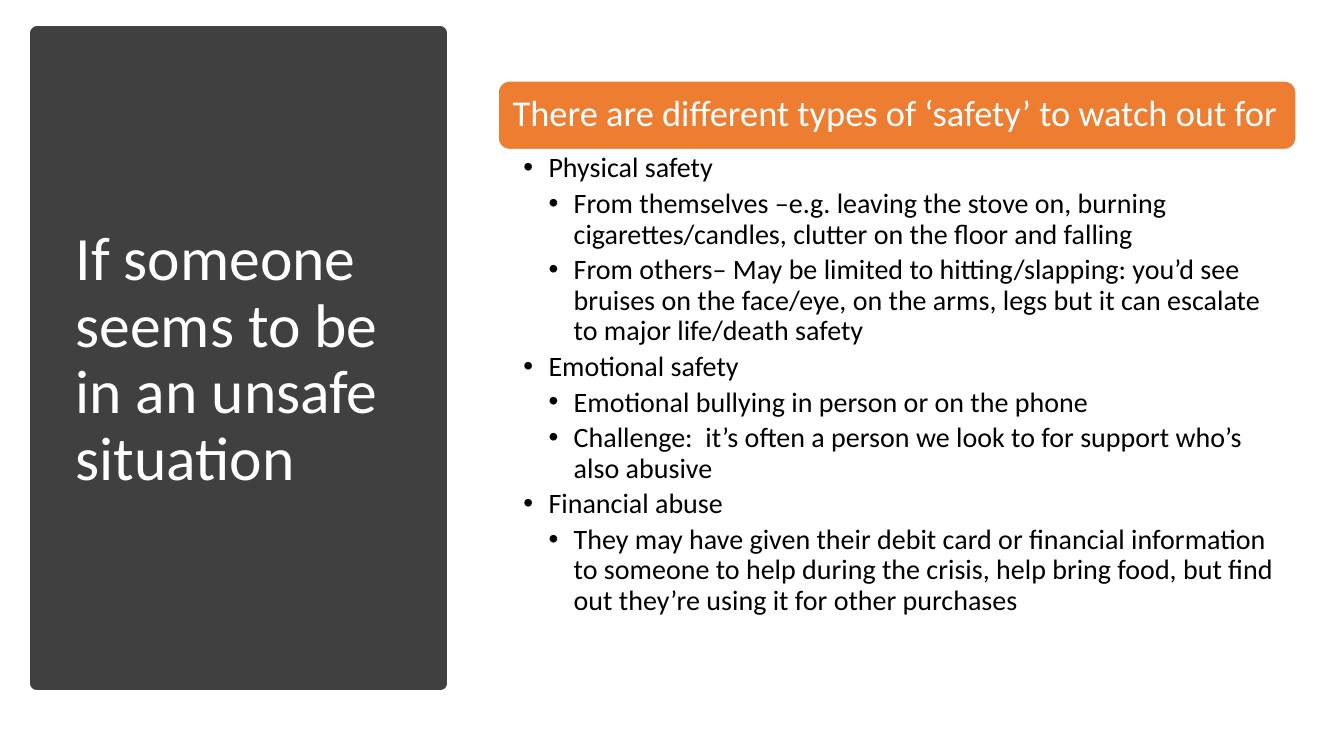
from dataclasses import dataclass

from lxml import etree
from pptx import Presentation
from pptx.dml.color import RGBColor
from pptx.enum.shapes import MSO_SHAPE as Shape
from pptx.enum.text import MSO_ANCHOR as Anchor, MSO_AUTO_SIZE as AutoSize, PP_ALIGN as Align
from pptx.oxml.ns import qn
from pptx.util import Pt


@dataclass(frozen=True)
class Theme:
    font: str = "Calibri"
    panel: str = "404040"
    accent: str = "ED7D31"
    light: str = "FFFFFF"
    dark: str = "000000"
    title_size: int = 44
    header_size: int = 26
    body_size: int = 20
    line_spacing: float = 0.9
    indent: int = 18


class SlideBuilder:
    def __init__(self, prs, theme):
        self.theme = theme
        self.s = prs.slides.add_slide(prs.slide_layouts[1])

    def place(self, sp, box):
        sp.left, sp.top, sp.width, sp.height = (Pt(v) for v in box)

    def frame(self, sp, insets, anchor):
        tf = sp.text_frame
        tf.word_wrap = True
        tf.auto_size = AutoSize.NONE
        tf.vertical_anchor = anchor
        tf.margin_left, tf.margin_top, tf.margin_right, tf.margin_bottom = (
            Pt(v) for v in insets)
        return tf

    def style(self, p, size, color, after=0):
        p.alignment = Align.LEFT
        p.line_spacing = self.theme.line_spacing
        p.space_before, p.space_after = Pt(0), Pt(after)
        for r in p.runs:
            r.font.name = self.theme.font
            r.font.size = Pt(size)
            r.font.color.rgb = RGBColor.from_string(color)

    def bullet(self, p):
        indent = self.theme.indent
        pPr = p._p.get_or_add_pPr()
        pPr.set("marL", str(Pt(indent * (p.level + 1))))
        pPr.set("indent", str(Pt(-indent)))
        etree.SubElement(pPr, qn("a:buFont")).set("typeface", "Arial")
        etree.SubElement(pPr, qn("a:buChar")).set("char", "•")

    def shape(self, kind, box, fill, line, weight):
        sp = self.s.shapes.add_shape(kind, *(Pt(v) for v in box))
        sp.shadow.inherit = False
        sp.fill.solid()
        sp.fill.fore_color.rgb = RGBColor.from_string(fill)
        sp.line.color.rgb = RGBColor.from_string(line)
        sp.line.width = Pt(weight)
        return sp

    def panel(self, box):
        t = self.theme
        sp = self.shape(Shape.RECTANGLE, box, t.panel, t.panel, 10)
        # Send the panel behind the placeholders
        self.s.shapes._spTree.insert(2, sp._element)

    def title(self, text, box):
        sp = self.s.shapes.title
        self.place(sp, box)
        tf = self.frame(sp, (7.2, 3.6, 7.2, 3.6), Anchor.MIDDLE)
        tf.text = text
        self.style(tf.paragraphs[0], self.theme.title_size, self.theme.light)

    def header(self, text, box):
        t = self.theme
        sp = self.shape(Shape.ROUNDED_RECTANGLE, box, t.accent, t.light, 1)
        tf = self.frame(sp, (8, 8, 8, 8), Anchor.MIDDLE)
        tf.text = text
        self.style(tf.paragraphs[0], t.header_size, t.light)

    def bullets(self, items, box):
        sp = self.s.placeholders[1]
        self.place(sp, box)
        tf = self.frame(sp, (18, 3, 14.4, 3), Anchor.TOP)
        for i, (level, text) in enumerate(items):
            p = tf.add_paragraph() if i else tf.paragraphs[0]
            p.text = text
            p.level = level
            self.style(p, self.theme.body_size, self.theme.dark, after=4)
            self.bullet(p)


SAFETY_TYPES = [
    (0, "Physical safety"),
    (1, "From themselves –e.g. leaving the stove on, burning cigarettes/candles, "
        "clutter on the floor and falling"),
    (1, "From others– May be limited to hitting/slapping: you’d see  bruises on the "
        "face/eye, on the arms, legs but it can escalate to major life/death safety"),
    (0, "Emotional safety"),
    (1, "Emotional bullying in person or on the phone"),
    (1, "Challenge:  it’s often a person we look to for support who’s also abusive"),
    (0, "Financial abuse"),
    (1, "They may have given their debit card or financial information to someone to "
        "help during the crisis, help bring food, but find out they’re using it for "
        "other purchases"),
]


def main():
    prs = Presentation()
    prs.slide_width, prs.slide_height = Pt(960), Pt(540)
    slide = SlideBuilder(prs, Theme())

    # Left panel with the title
    slide.panel((26.5, 23.8, 288, 464.4))
    slide.title("If someone seems to be in an unsafe situation", (46.8, 50.4, 249, 414))

    # Right column: header bar and list
    left, top, width, bar = 355.8, 57.8, 570, 49
    slide.header("There are different types of ‘safety’ to watch out for",
                 (left, top, width, bar))
    slide.bullets(SAFETY_TYPES, (left, top + bar, width, 347.8))

    prs.save("out.pptx")


if __name__ == "__main__":
    main()
